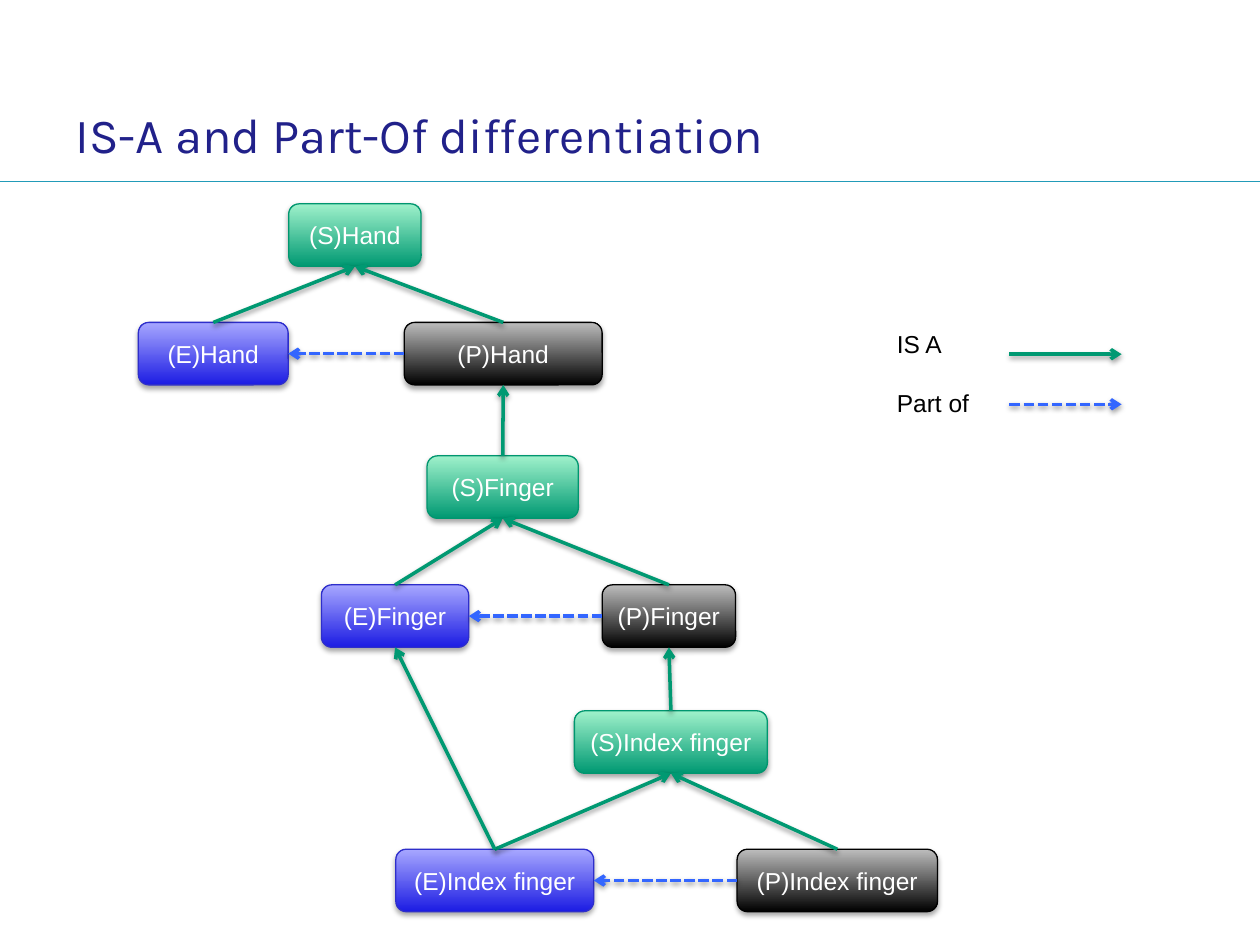
from typing import NamedTuple

from lxml.etree import SubElement
from pptx import Presentation
from pptx.dml.color import RGBColor
from pptx.enum.dml import MSO_LINE
from pptx.enum.shapes import MSO_CONNECTOR, MSO_SHAPE
from pptx.enum.text import MSO_ANCHOR, MSO_AUTO_SIZE, PP_ALIGN
from pptx.oxml.ns import qn
from pptx.util import Cm, Pt

COLORS = {
    "title": "21218A", "rule": "229BB8", "text": "000000", "label": "FFFFFF",
    "is": "009972", "part": "3366FF", "shadow": "000000",
}
FILLS = {
    "E": {"dark": "1C1CE3", "light": "A7A7FF", "edge": "2E2ECB"},
    "S": {"dark": "009972", "light": "9FF1CB", "edge": "00966F"},
    "P": {"dark": "000000", "light": "BDBDBD", "edge": "000000"},
}
HEIGHT = 1.26
TOP, LEFT, BOTTOM, RIGHT = range(4)


class Node(NamedTuple):
    kind: str
    name: str
    x: float
    y: float
    width: float


class Link(NamedTuple):
    start: str
    end: str
    kind: str = "is"


NODES = [
    Node("E", "Hand", 2.79, 6.5, 3.02),
    Node("E", "Finger", 6.48, 11.79, 2.97),
    Node("E", "Index finger", 7.98, 17.12, 3.99),
    Node("S", "Hand", 5.82, 4.11, 2.67),
    Node("S", "Finger", 8.61, 9.19, 3.05),
    Node("S", "Index finger", 11.58, 14.33, 3.89),
    Node("P", "Hand", 8.15, 6.5, 3.99),
    Node("P", "Finger", 12.14, 11.79, 2.69),
    Node("P", "Index finger", 14.86, 17.12, 4.04),
]
LINKS = [
    Link("(E)Hand", "(S)Hand"),
    Link("(P)Hand", "(S)Hand"),
    Link("(S)Finger", "(P)Hand"),
    Link("(E)Finger", "(S)Finger"),
    Link("(P)Finger", "(S)Finger"),
    Link("(E)Index finger", "(S)Index finger"),
    Link("(S)Index finger", "(P)Finger"),
    Link("(P)Index finger", "(S)Index finger"),
    Link("(P)Hand", "(E)Hand", "part"),
    Link("(P)Finger", "(E)Finger", "part"),
    Link("(P)Index finger", "(E)Index finger", "part"),
    Link("(E)Index finger", "(E)Finger"),
]


def rgb(code: str) -> RGBColor:
    return RGBColor.from_string(code)


def style(font, face: str, size: int, color: str) -> None:
    font.name = face
    font.size = Pt(size)
    font.color.rgb = rgb(COLORS[color])


def shade(effects, gap: float, alpha: int) -> None:
    outer = SubElement(effects, qn("a:outerShdw"), blurRad=str(Pt(3.1)),
                       dist=str(Pt(gap)), dir="5400000", rotWithShape="0")
    color = SubElement(outer, qn("a:srgbClr"), val=COLORS["shadow"])
    SubElement(color, qn("a:alpha"), val=str(alpha * 1000))


def add_line(slide, start: tuple, end: tuple, color: str, width: float):
    line = slide.shapes.add_connector(
        MSO_CONNECTOR.STRAIGHT, *map(Cm, start + end))
    line.line.color.rgb = rgb(COLORS[color])
    line.line.width = Pt(width)
    SubElement(line._element.spPr, qn("a:effectLst"))
    return line


def add_arrow(slide, kind: str, start: tuple = (0, 0), end: tuple = (0, 0)):
    arrow = add_line(slide, start, end, kind, 2)
    if kind == "part":
        arrow.line.dash_style = MSO_LINE.SQUARE_DOT
    props = arrow._element.spPr
    SubElement(props.find(qn("a:ln")), qn("a:tailEnd"), type="arrow")
    shade(props.find(qn("a:effectLst")), 1.6, 38)
    return arrow


def add_node(slide, node: Node):
    box = slide.shapes.add_shape(
        MSO_SHAPE.ROUNDED_RECTANGLE,
        Cm(node.x), Cm(node.y), Cm(node.width), Cm(HEIGHT))
    tone = FILLS[node.kind]
    box.fill.gradient()
    box.fill.gradient_angle = 90
    for stop, key, place in zip(box.fill.gradient_stops, ("dark", "light"), (0, 1)):
        stop.color.rgb = rgb(tone[key])
        stop.position = place
    box.line.color.rgb = rgb(tone["edge"])
    box.line.width = Pt(0.75)
    box.shadow.inherit = False
    shade(box._element.spPr.find(qn("a:effectLst")), 1.8, 35)
    frame = box.text_frame
    frame.text = f"({node.kind}){node.name}"
    frame.vertical_anchor = MSO_ANCHOR.MIDDLE
    frame.paragraphs[0].alignment = PP_ALIGN.CENTER
    style(frame.paragraphs[0].runs[0].font, "Arial", 14, "label")
    return box


def add_link(slide, link: Link, boxes: dict) -> None:
    sites = (TOP, BOTTOM) if link.kind == "is" else (LEFT, RIGHT)
    arrow = add_arrow(slide, link.kind)
    arrow.begin_connect(boxes[link.start], sites[0])
    arrow.end_connect(boxes[link.end], sites[1])


def set_title(slide) -> None:
    title = slide.shapes.title
    title.left, title.top, title.width, title.height = map(
        Cm, (1.27, 1.98, 18.31, 1.42))
    frame = title.text_frame
    frame.text = "IS-A and Part-Of differentiation"
    frame.auto_size = MSO_AUTO_SIZE.NONE
    frame.vertical_anchor = MSO_ANCHOR.MIDDLE
    frame.margin_left = frame.margin_right = Cm(0.25)
    frame.margin_top = frame.margin_bottom = Cm(0.25)
    frame.paragraphs[0].alignment = PP_ALIGN.LEFT
    style(frame.paragraphs[0].runs[0].font, "Karla", 28, "title")


def add_legend(slide) -> None:
    box = slide.shapes.add_textbox(Cm(17.83), Cm(6.5), Cm(6.22), Cm(2.06))
    frame = box.text_frame
    frame.word_wrap = True
    frame.text = "IS A\nPart of"
    for line in frame.paragraphs:
        style(line.runs[0].font, "Arial", 14, "text")
    frame.paragraphs[1].space_before = Pt(17)
    for kind, y in (("part", 8.15), ("is", 7.14)):
        add_arrow(slide, kind, (20.35, y), (22.61, y))


def main() -> None:
    deck = Presentation()
    deck.slide_width, deck.slide_height = Cm(25.4), Cm(19.05)
    slide = deck.slides.add_slide(deck.slide_layouts[5])
    add_line(slide, (0, 3.66), (25.4, 3.66), "rule", 0.75)
    set_title(slide)
    boxes = {f"({node.kind}){node.name}": add_node(slide, node) for node in NODES}
    for link in LINKS:
        add_link(slide, link, boxes)
    add_legend(slide)
    deck.save("out.pptx")


if __name__ == "__main__":
    main()
